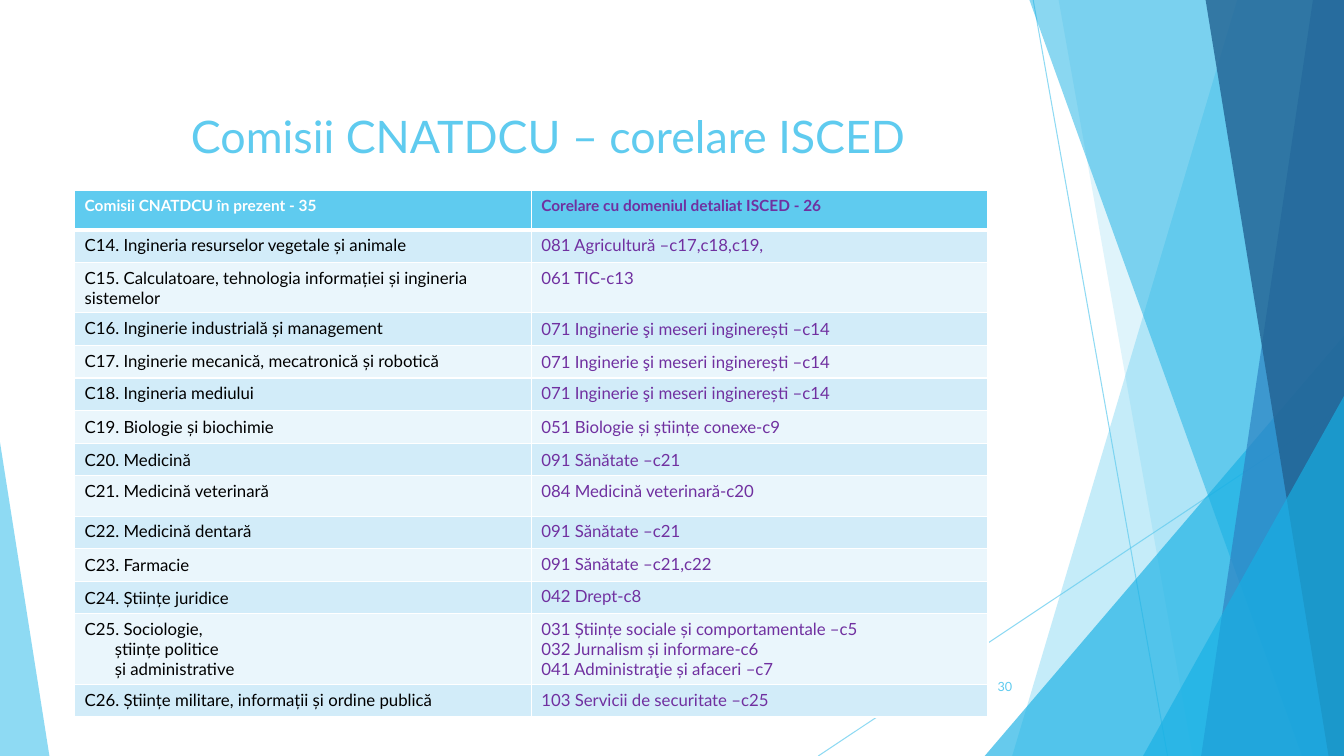
from lxml import etree
from pptx import Presentation
from pptx.dml.color import RGBColor
from pptx.enum.shapes import MSO_CONNECTOR, MSO_SHAPE
from pptx.enum.text import MSO_ANCHOR, PP_ALIGN
from pptx.oxml.ns import qn
from pptx.util import Pt

STRAIGHT = MSO_CONNECTOR.STRAIGHT
TRIANGLE = MSO_SHAPE.ISOSCELES_TRIANGLE
TOP, MIDDLE = MSO_ANCHOR.TOP, MSO_ANCHOR.MIDDLE
CENTER, RIGHT = PP_ALIGN.CENTER, PP_ALIGN.RIGHT

WIDTH, HEIGHT = 960, 540
SKY, PURPLE, BLACK, WHITE = "5FCBEF", "7030A0", "000000", "FFFFFF"
BAND_FILLS = ["D2ECF9", "EAF6FC"]


def color(value):
    return RGBColor.from_string(value)


def write(frame, lines, size, ink, bold=False, align=None, indent=0):
    for index, line in enumerate(lines):
        para = frame.paragraphs[0] if index == 0 else frame.add_paragraph()
        if index and indent:
            para._p.get_or_add_pPr().set("marL", str(Pt(indent)))
        para.alignment = align
        span = para.add_run()
        span.text = line
        for name, value in {"name": "Lato", "size": Pt(size), "bold": bold}.items():
            setattr(span.font, name, value)
        span.font.color.rgb = color(ink)


deck = Presentation()
deck.slide_width, deck.slide_height = Pt(WIDTH), Pt(HEIGHT)
page = deck.slides.add_slide(deck.slide_layouts[5])
shapes = page.shapes
translucent = []

for start_x, start_y, end_x, end_y in [(738, 0, 834, 540), (960, 290, 584.5, 540)]:
    line = shapes.add_connector(STRAIGHT, Pt(start_x), Pt(start_y), Pt(end_x), Pt(end_y))
    line.line.width = Pt(0.75)
    line.line.color.rgb = color(SKY)
    etree.SubElement(line._element.spPr, qn("a:effectLst"))
    translucent.append((line, 70))

facets = [
    ("band", (884.2, 723), SKY, 36),
    ("band", (756, 851.8), SKY, 20),
    ("triangle", (703.4, 239.8, 256.6, 1), "17B0E4", 66),
    ("band", (735.1, 929.5), "17B0E4", 50),
    ("band", (938.2, 858.2), "2E83C3", 70),
    ("band", (861.1, 949), "226292", 80),
    ("triangle", (816.5, 283, 143.5, 1), "17B0E4", 66),
    ("triangle", (0, 316, 35.3, 0), SKY, 70),
]
for kind, geometry, fill, opacity in facets:
    if kind == "band":
        top_x, bottom_x = geometry
        builder = shapes.build_freeform(top_x, -0.6, scale=Pt(1))
        builder.add_line_segments([(WIDTH, -0.6), (WIDTH, HEIGHT), (bottom_x, HEIGHT)])
        facet = builder.convert_to_shape()
    else:
        left, top, width, apex = geometry
        facet = shapes.add_shape(TRIANGLE, Pt(left), Pt(top), Pt(width), Pt(HEIGHT - top))
        facet.adjustments[0] = apex
    facet.shadow.inherit = False
    facet.fill.solid()
    facet.fill.fore_color.rgb = color(fill)
    facet.line.fill.background()
    translucent.append((facet, opacity))

for item, opacity in translucent:
    for tint in item._element.spPr.iter(qn("a:srgbClr")):
        etree.SubElement(tint, qn("a:alpha"), val=str(opacity * 1000))

title = shapes.title
shapes._spTree.append(title._element)
title.left, title.top, title.width, title.height = Pt(53.3), Pt(74.2), Pt(676.8), Pt(55.4)
title.text_frame.vertical_anchor = TOP
write(title.text_frame, ["Comisii CNATDCU – corelare ISCED"], 32, SKY, align=CENTER)

ENGINEERING = "071 Inginerie şi meseri inginerești –c14"
HEALTH = "091 Sănătate –c21"
rows = [
    (28, "Comisii CNATDCU în prezent - 35", "Corelare cu domeniul detaliat ISCED - 26", TOP, TOP),
    (23.3, "C14. Ingineria resurselor vegetale și animale", "081 Agricultură –c17,c18,c19,", TOP, TOP),
    (36, "C15. Calculatoare, tehnologia informației și ingineria sistemelor", "061 TIC-c13", TOP, TOP),
    (23.3, "C16. Inginerie industrială și management", ENGINEERING, TOP, MIDDLE),
    (23.3, "C17. Inginerie mecanică, mecatronică și robotică", ENGINEERING, TOP, MIDDLE),
    (23.3, "C18. Ingineria mediului", ENGINEERING, TOP, TOP),
    (23.3, "C19. Biologie și biochimie", "051 Biologie și științe conexe-c9", MIDDLE, MIDDLE),
    (23.3, "C20. Medicină", HEALTH, MIDDLE, MIDDLE),
    (28.8, "C21. Medicină veterinară", "084 Medicină veterinară-c20", TOP, TOP),
    (23.3, "C22. Medicină dentară", HEALTH, TOP, TOP),
    (23.3, "C23. Farmacie", "091 Sănătate –c21,c22", MIDDLE, TOP),
    (23.3, "C24. Științe juridice", "042 Drept-c8", MIDDLE, TOP),
    (50.2, "C25. Sociologie,\nștiințe politice\nși administrative",
     "031 Științe sociale și comportamentale –c5\n032 Jurnalism și informare-c6\n"
     "041 Administraţie și afaceri –c7", TOP, TOP),
    (23.3, "C26. Științe militare, informații și ordine publică", "103 Servicii de securitate –c25", TOP, TOP),
]
table_height = sum(row[0] for row in rows)
table = shapes.add_table(len(rows), 2, Pt(53.3), Pt(136.2), Pt(652.4), Pt(table_height)).table
for column in table.columns:
    column.width = Pt(326.2)

for row_index, (height, commission, field, *anchors) in enumerate(rows):
    table.rows[row_index].height = Pt(height)
    header = row_index == 0
    for column_index, text in enumerate([commission, field]):
        cell = table.cell(row_index, column_index)
        cell.vertical_anchor = anchors[column_index]
        cell.fill.solid()
        cell.fill.fore_color.rgb = color(SKY if header else BAND_FILLS[(row_index - 1) % 2])
        ink = PURPLE if column_index else WHITE if header else BLACK
        indent = 0 if column_index else 21.5
        write(cell.text_frame, text.split("\n"), 11 if header else 12, ink, header, indent=indent)
        borders = {"lnL": 1, "lnR": 1, "lnT": 3 if row_index == 1 else 1, "lnB": 3 if header else 1}
        for position, (side, weight) in enumerate(borders.items()):
            border = etree.Element(qn(f"a:{side}"), w=str(Pt(weight)))
            solid = etree.SubElement(border, qn("a:solidFill"))
            etree.SubElement(solid, qn("a:srgbClr"), val=WHITE)
            cell._tc.get_or_add_tcPr().insert(position, border)

number = shapes.add_textbox(Pt(676), Pt(476), Pt(54), Pt(28.8))
number.text_frame.word_wrap = True
number.text_frame.vertical_anchor = MIDDLE
write(number.text_frame, ["30"], 9, SKY, align=RIGHT)

deck.save("out.pptx")
